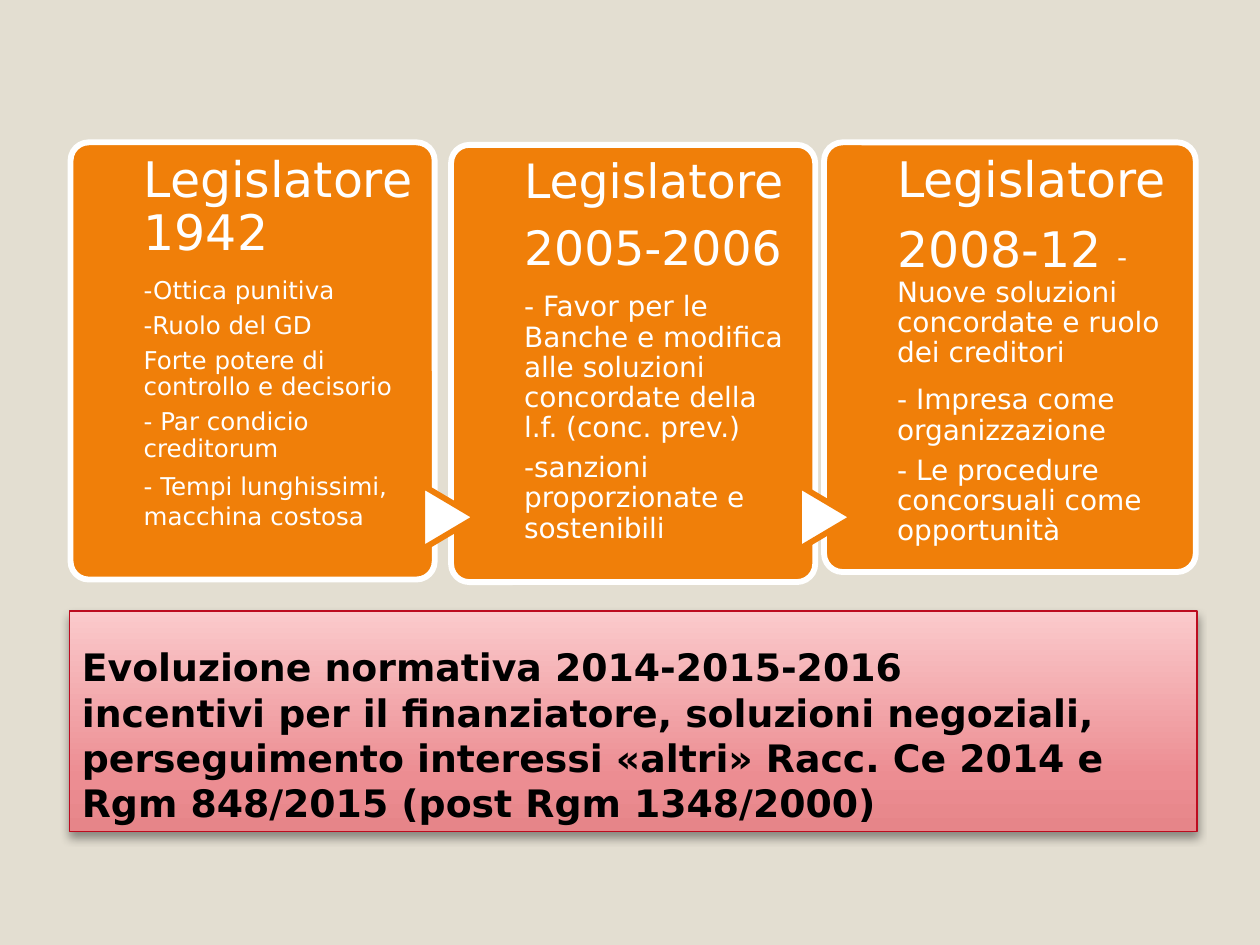
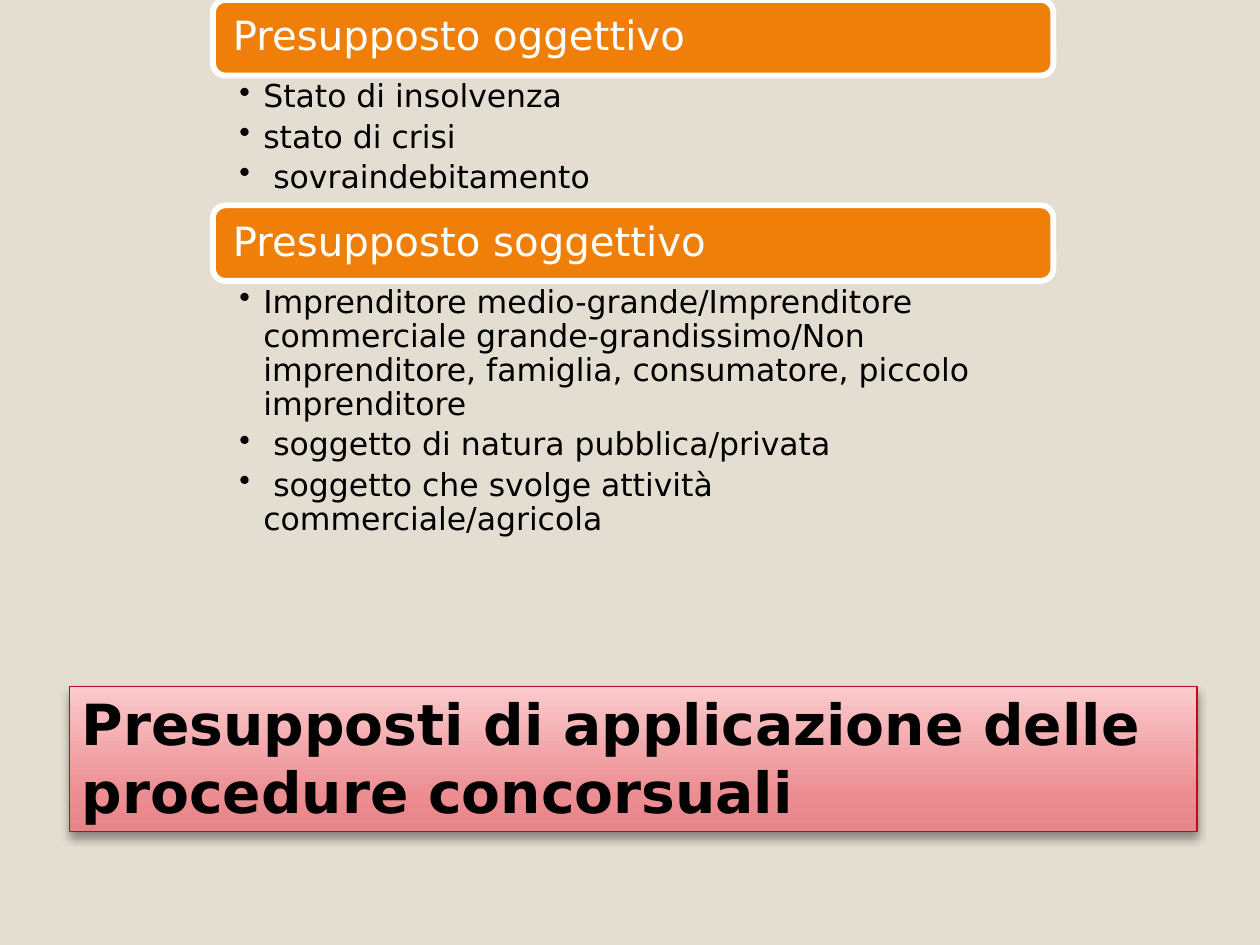
from dataclasses import dataclass

from lxml.etree import SubElement
from pptx import Presentation
from pptx.dml.color import RGBColor
from pptx.enum.shapes import MSO_SHAPE
from pptx.enum.text import MSO_ANCHOR, MSO_AUTO_SIZE, PP_ALIGN
from pptx.oxml import parse_xml
from pptx.oxml.ns import nsdecls, qn
from pptx.util import Inches, Pt


@dataclass(frozen=True)
class Theme:
    font: str = "DejaVu Sans"
    background: str = "E3DED1"
    accent: str = "F07F09"
    light: str = "FFFFFF"
    dark: str = "000000"
    title_line: str = "BC0B1F"
    title_stops: tuple = ((0, "E68589"), (25, "EC8D92"), (100, "FBCACC"))
    outline: float = 3.35
    title_left: float = 0.55
    title_width: float = 8.95
    title_bottom: float = 6.6
    bar_size: float = 23
    bullet_size: float = 18
    line_spacing: float = 0.9
    block_gap: float = 0.35
    bullet_gap: float = 0.2


THEME = Theme()


def paint(shape, fill, line):
    shape.shadow.inherit = False
    shape.fill.solid()
    shape.fill.fore_color.rgb = RGBColor.from_string(fill)
    shape.line.color.rgb = RGBColor.from_string(line)
    shape.line.width = Pt(THEME.outline)


def style_span(span, size, color, bold=False):
    span.font.name = THEME.font
    span.font.size = Pt(size)
    span.font.bold = bold
    span.font.color.rgb = RGBColor.from_string(color)


def prepare_frame(frame, margins, anchor=MSO_ANCHOR.TOP):
    frame.word_wrap = True
    frame.auto_size = MSO_AUTO_SIZE.NONE
    frame.vertical_anchor = anchor
    frame.margin_left, frame.margin_top, frame.margin_right, frame.margin_bottom = map(Inches, margins)


def write_paragraphs(frame, paragraphs, color, gap):
    for index, spans in enumerate(paragraphs):
        para = frame.paragraphs[0] if index == 0 else frame.add_paragraph()
        para.alignment = PP_ALIGN.LEFT
        para.line_spacing = THEME.line_spacing
        para.space_after = Pt(gap * max(size for _, size in spans))
        for text, size in spans:
            span = para.add_run()
            span.text = text
            style_span(span, size, color)


def add_title_band(slide, text, top, size):
    title = slide.shapes.title
    title.left, title.top = Inches(THEME.title_left), Inches(top)
    title.width, title.height = Inches(THEME.title_width), Inches(THEME.title_bottom - top)
    stops = "".join(
        f'<a:gs pos="{position * 1000}"><a:srgbClr val="{color}"/></a:gs>'
        for position, color in THEME.title_stops
    )
    properties = title._element.spPr
    properties.append(parse_xml(
        f'<a:gradFill {nsdecls("a")} rotWithShape="1"><a:gsLst>{stops}</a:gsLst>'
        '<a:lin ang="16200000" scaled="0"/></a:gradFill>'
    ))
    title.line.color.rgb = RGBColor.from_string(THEME.title_line)
    title.line.width = Pt(0.75)
    properties.append(parse_xml(
        f'<a:effectLst {nsdecls("a")}>'
        f'<a:outerShdw blurRad="{Pt(5.2)}" dist="{Pt(3)}" dir="5400000" rotWithShape="0">'
        f'<a:srgbClr val="{THEME.dark}"><a:alpha val="40000"/></a:srgbClr>'
        '</a:outerShdw></a:effectLst>'
    ))
    prepare_frame(title.text_frame, (0.1, 0.05, 0.1, 0.05), MSO_ANCHOR.BOTTOM)
    title.text_frame.text = text
    para = title.text_frame.paragraphs[0]
    para.alignment = PP_ALIGN.LEFT
    para.line_spacing = 1.0
    for span in para.runs:
        style_span(span, size, THEME.dark, bold=True)


def add_text_box(slide, left, top, width, height, margins):
    box = slide.shapes.add_textbox(Inches(left), Inches(top), Inches(width), Inches(height))
    prepare_frame(box.text_frame, margins)
    return box.text_frame


def add_card(slide, left, top, width, height, paragraphs):
    card = slide.shapes.add_shape(
        MSO_SHAPE.ROUNDED_RECTANGLE, Inches(left), Inches(top), Inches(width), Inches(height))
    card.adjustments[0] = 0.05
    paint(card, THEME.accent, THEME.light)
    frame = add_text_box(slide, left + 0.58, top, width - 0.74, height, (0, 0.1, 0, 0))
    write_paragraphs(frame, paragraphs, THEME.light, THEME.block_gap)
    return frame


def add_arrowhead(slide, left):
    arrowhead = slide.shapes.add_shape(
        MSO_SHAPE.FLOWCHART_EXTRACT, Inches(left), Inches(3.89), Inches(0.51), Inches(0.43))
    arrowhead.rotation = 90
    paint(arrowhead, THEME.light, THEME.accent)


def add_heading_bar(slide, text, left, top, width):
    bar = slide.shapes.add_shape(
        MSO_SHAPE.ROUNDED_RECTANGLE, Inches(left), Inches(top), Inches(width), Inches(0.6))
    paint(bar, THEME.accent, THEME.light)
    prepare_frame(bar.text_frame, (0.13, 0.1, 0.13, 0.1), MSO_ANCHOR.MIDDLE)
    write_paragraphs(bar.text_frame, [[(text, THEME.bar_size)]], THEME.light, THEME.block_gap)


def add_bullets(slide, items, left, top, width, height):
    frame = add_text_box(slide, left, top, width, height, (0.21, 0.03, 0.18, 0.03))
    paragraphs = [[(item, THEME.bullet_size)] for item in items]
    write_paragraphs(frame, paragraphs, THEME.dark, THEME.bullet_gap)
    for para in frame.paragraphs:
        properties = para._p.get_or_add_pPr()
        properties.set("marL", str(Inches(0.19)))
        properties.set("indent", str(-Inches(0.19)))
        SubElement(properties, qn("a:buChar")).set("char", "•")


def build_legislators(deck):
    slide = deck.slides.add_slide(deck.slide_layouts[5])
    add_title_band(
        slide,
        "Evoluzione normativa 2014-2015-2016\v"
        "incentivi per il finanziatore, soluzioni negoziali,\v"
        "perseguimento interessi «altri» Racc. Ce 2014 e Rgm 848/2015 (post Rgm 1348/2000)",
        4.85, 21.6)
    first_card = add_card(slide, 0.56, 1.13, 2.89, 3.47, [
        [("Legislatore 1942", 28)],
        [("-Ottica punitiva", 14)],
        [("-Ruolo del GD", 14)],
        [("Forte potere di controllo e decisorio", 14)],
        [("- Par condicio creditorum", 14)],
        [("- Tempi lunghissimi, macchina costosa", 14)],
    ])
    first_card.paragraphs[-1].line_spacing = 1.0
    add_card(slide, 3.58, 1.15, 2.89, 3.47, [
        [("Legislatore", 27)],
        [("2005-2006", 27)],
        [("- Favor per le Banche e modifica alle soluzioni concordate della l.f. (conc. prev.)", 16)],
        [("-sanzioni proporzionate e sostenibili", 16)],
    ])
    add_arrowhead(slide, 3.31)
    add_card(slide, 6.54, 1.13, 2.95, 3.41, [
        [("Legislatore", 28)],
        [("2008-12 ", 28), ("- Nuove soluzioni concordate e ruolo dei creditori", 16)],
        [("- Impresa come organizzazione", 16)],
        [("- Le procedure concorsuali come opportunità", 16)],
    ])
    add_arrowhead(slide, 6.3)


def build_requirements(deck):
    slide = deck.slides.add_slide(deck.slide_layouts[5])
    add_title_band(slide, "Presupposti di applicazione delle procedure concorsuali", 5.45, 32.4)
    left, width = 1.69, 6.67
    sections = [
        ("Presupposto oggettivo", 0, 1.02, [
            "Stato di insolvenza",
            "stato di crisi",
            " sovraindebitamento",
        ]),
        ("Presupposto soggettivo", 1.63, 3.12, [
            "Imprenditore medio-grande/Imprenditore commerciale grande-grandissimo/"
            "Non imprenditore, famiglia, consumatore, piccolo imprenditore",
            " soggetto di natura pubblica/privata",
            " soggetto che svolge attività commerciale/agricola",
        ]),
    ]
    for heading, top, height, items in sections:
        add_heading_bar(slide, heading, left, top, width)
        add_bullets(slide, items, left, top + 0.61, width, height)


def main():
    deck = Presentation()
    deck.slide_width, deck.slide_height = Inches(10), Inches(7.5)
    background = deck.slide_master.background.fill
    background.solid()
    background.fore_color.rgb = RGBColor.from_string(THEME.background)
    build_legislators(deck)
    build_requirements(deck)
    deck.save("out.pptx")


if __name__ == "__main__":
    main()
